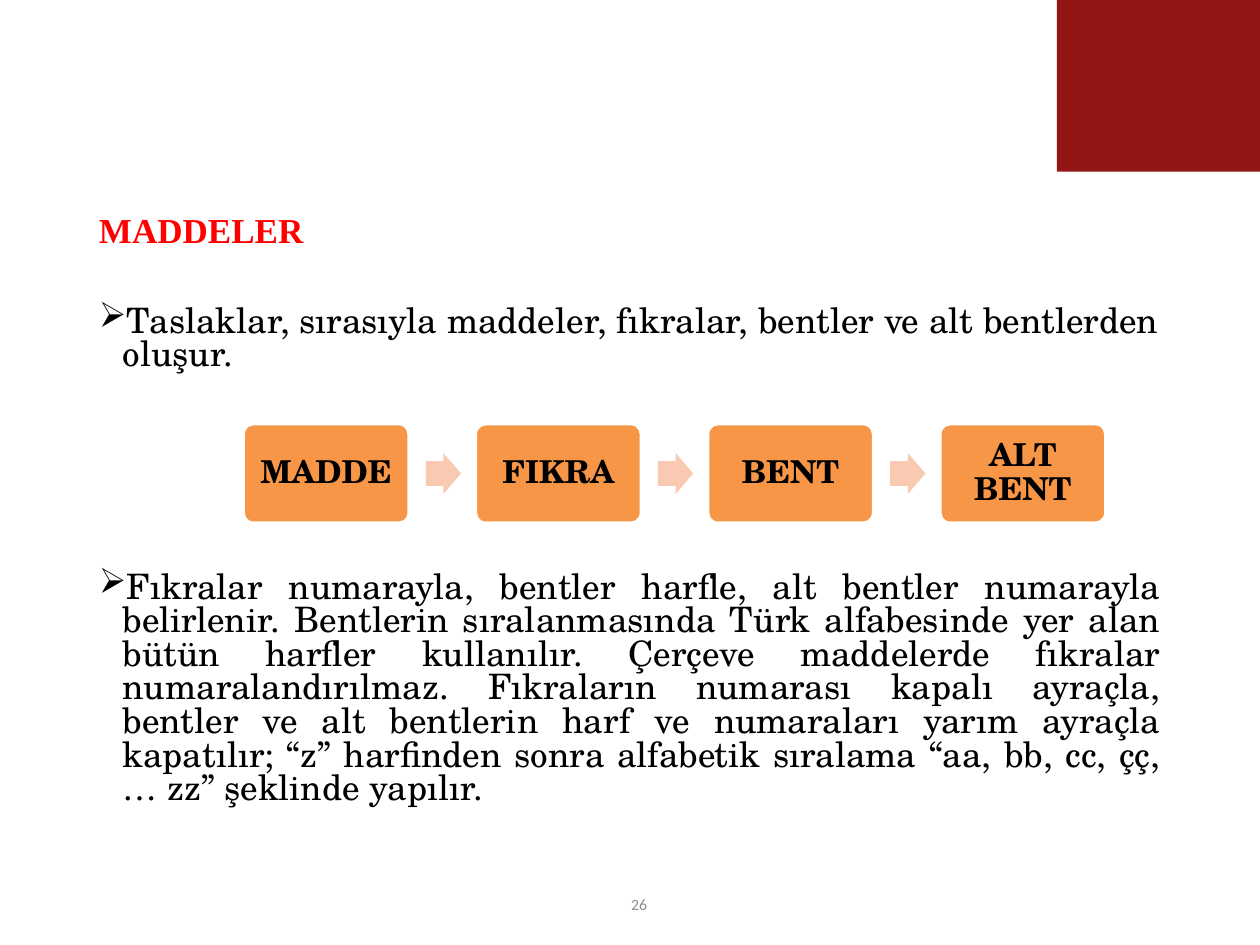
"""Build the slide on articles and their subdivisions in draft legislation."""
from lxml import etree
from pptx import Presentation
from pptx import util as u
from pptx.dml.color import RGBColor
from pptx.enum import shapes, text
from pptx.oxml.ns import qn

SCHOOL = "TeX Gyre Schola"


def color(value):
    return RGBColor.from_string(value)


def write(box, words, font=SCHOOL, size=20, ink="000000", bold=False,
          align=text.PP_ALIGN.LEFT, anchor=text.MSO_ANCHOR.MIDDLE,
          spacing=0.9, inset=7.2, bullet=None):
    frame = box.text_frame
    frame.word_wrap = True
    frame.vertical_anchor = anchor
    frame.margin_left = frame.margin_right = u.Pt(inset)
    frame.margin_top = frame.margin_bottom = u.Pt(3.6)
    para = frame.paragraphs[0]
    para.alignment = align
    para.line_spacing = spacing
    if bullet:
        properties = para._p.get_or_add_pPr()
        properties.set("marL", str(u.Pt(13.5)))
        properties.set("indent", str(-u.Pt(13.5)))
        etree.SubElement(properties, qn("a:buChar")).set("char", bullet)
    span = para.add_run()
    span.text = words
    span.font.name = font
    span.font.size = u.Pt(size)
    span.font.bold = bold
    span.font.color.rgb = color(ink)


deck = Presentation()
deck.slide_width, deck.slide_height = u.Pt(720), u.Pt(540)
page = deck.slides.add_slide(deck.slide_layouts[6])

title = page.shapes.add_textbox(u.Pt(49.5), u.Pt(110.9), u.Pt(621), u.Pt(43.2))
write(title, "MADDELER", font="Times New Roman", ink="FF0000", bold=True)

rules = [
    (171.4, 54, text.PP_ALIGN.LEFT,
     "Taslaklar, sırasıyla maddeler, fıkralar, bentler ve alt bentlerden oluşur."),
    (323.4, 173.4, text.PP_ALIGN.JUSTIFY,
     "Fıkralar numarayla, bentler harfle, alt bentler numarayla belirlenir. "
     "Bentlerin sıralanmasında Türk alfabesinde yer alan bütün harfler kullanılır. "
     "Çerçeve maddelerde fıkralar numaralandırılmaz. Fıkraların numarası kapalı "
     "ayraçla, bentler ve alt bentlerin harf ve numaraları yarım ayraçla kapatılır; "
     "“z” harfinden sonra alfabetik sıralama “aa, bb, cc, çç, … zz” şeklinde yapılır."),
]
for top, height, align, words in rules:
    rule = page.shapes.add_textbox(u.Pt(49.5), u.Pt(top), u.Pt(621), u.Pt(height))
    write(rule, words, align=align, anchor=text.MSO_ANCHOR.TOP, spacing=0.8, bullet="➢")

levels = ["MADDE", "FIKRA", "BENT", "ALT BENT"]
for index, level in enumerate(levels):
    left = 139 + index * 132.7
    step = page.shapes.add_shape(shapes.MSO_SHAPE.ROUNDED_RECTANGLE,
                                 u.Pt(left), u.Pt(242.1), u.Pt(94.8), u.Pt(56.9))
    step.adjustments[0] = 0.1
    step.shadow.inherit = False
    step.fill.solid()
    step.fill.fore_color.rgb = color("F79646")
    step.line.color.rgb = color("FFFFFF")
    step.line.width = u.Pt(2)
    write(step, level, size=18, bold=True, align=text.PP_ALIGN.CENTER, inset=5)
    if index < len(levels) - 1:
        arrow = page.shapes.add_shape(shapes.MSO_SHAPE.RIGHT_ARROW,
                                      u.Pt(left + 104.3), u.Pt(258.8), u.Pt(20.1), u.Pt(23.5))
        arrow.adjustments[0], arrow.adjustments[1] = 0.6, 0.5
        arrow.shadow.inherit = False
        arrow.fill.solid()
        arrow.fill.fore_color.rgb = color("FAC9B1")
        arrow.line.fill.background()

number = page.shapes.add_textbox(u.Pt(342.9), u.Pt(504), u.Pt(34), u.Pt(25.2))
write(number, "26", font="Calibri", size=9, ink="8C8C8C",
      align=text.PP_ALIGN.RIGHT, spacing=1.0)

corner = page.shapes.add_shape(shapes.MSO_SHAPE.RECTANGLE,
                               u.Pt(604), u.Pt(0), u.Pt(116), u.Pt(98.2))
corner.shadow.inherit = False
corner.fill.solid()
corner.fill.fore_color.rgb = color("921614")
corner.line.fill.background()

deck.save("out.pptx")
